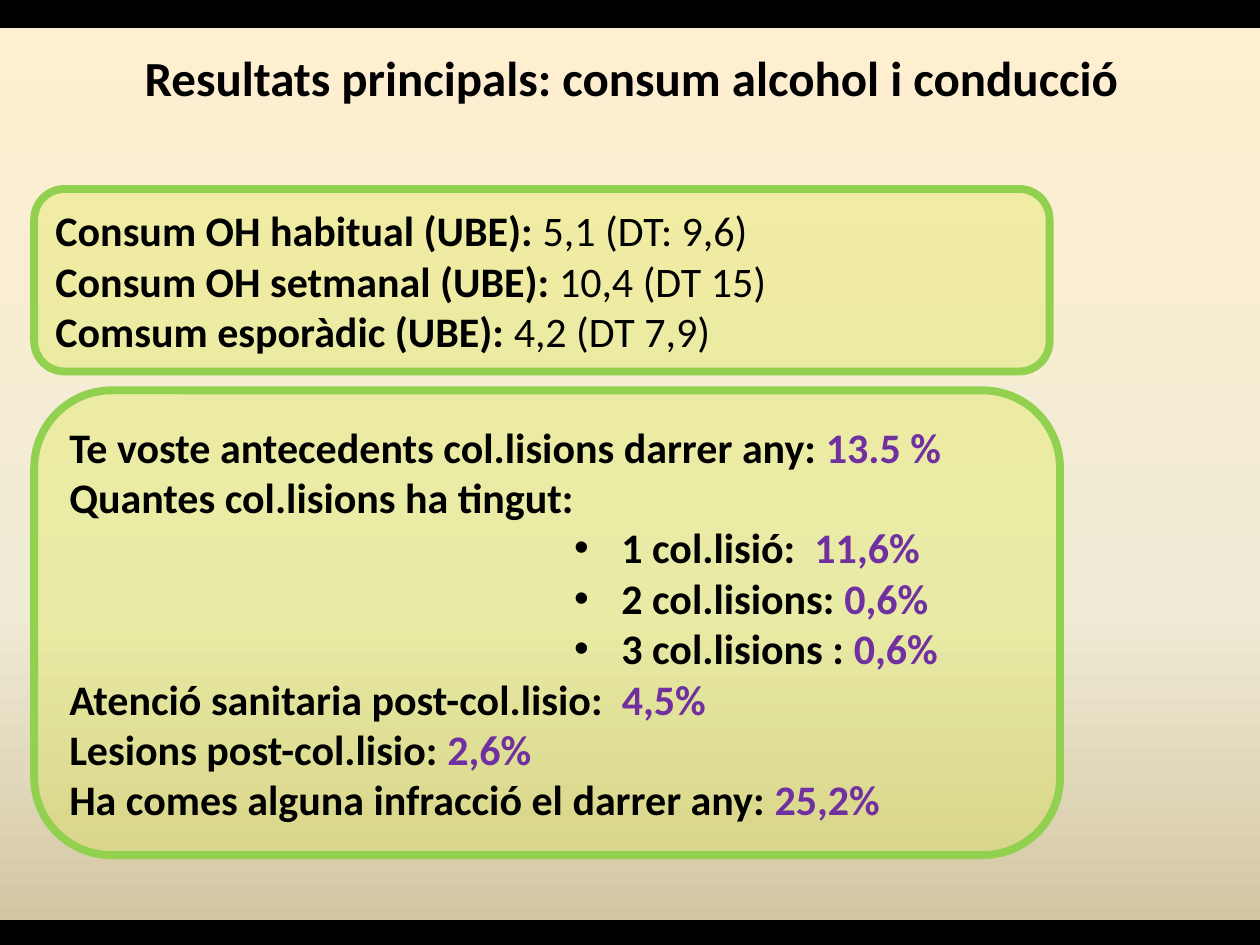
import copy
from pptx import Presentation
from pptx import util as u
from pptx.dml.color import RGBColor
from pptx.enum import shapes, text
from pptx.oxml import ns
from lxml import etree

COLORS = {
    "black": "000000", "purple": "7030A0", "green": "92D050", "lime": "D8E937",
    "sky": "FFEFD1", "sand": "F0EBD5", "earth": "D1C39F",
}


def rgb(name):
    return RGBColor.from_string(COLORS[name])


def add_text(paragraph, content, size=24, bold=True, color="black"):
    run = paragraph.add_run()
    run.text = content
    run.font.name = "Calibri"
    run.font.size = u.Pt(size)
    run.font.bold = bold
    run.font.color.rgb = rgb(color)


presentation = Presentation()
presentation.slide_width, presentation.slide_height = u.Cm(25.4), u.Cm(19.05)
slide = presentation.slides.add_slide(presentation.slide_layouts[5])

background = slide.background.fill
background.gradient()
background.gradient_angle = 270
stop_list = slide.element.find(".//" + ns.qn("a:gsLst"))
stop_list.append(copy.deepcopy(stop_list[-1]))
for stop, (position, color) in zip(
        background.gradient_stops, [(0, "sky"), (0.65, "sand"), (1, "earth")]):
    stop.position = position
    stop.color.rgb = rgb(color)

for top in (0, 18.59):
    bar = slide.shapes.add_shape(
        shapes.MSO_SHAPE.RECTANGLE, 0, u.Cm(top), presentation.slide_width, u.Cm(0.53))
    bar.shadow.inherit = False
    bar.fill.solid()
    bar.fill.fore_color.rgb = rgb("black")
    bar.line.color.rgb = rgb("black")
    bar.line.width = u.Pt(2)

consumption = [
    ("Consum OH habitual (UBE): ", "5,1 (DT: 9,6)", False),
    ("Consum OH setmanal (UBE): ", "10,4 (DT 15)", False),
    ("Comsum esporàdic (UBE): ", "4,2 (DT 7,9)", False),
]
collisions = [
    ("Te voste antecedents col.lisions darrer any: ", "13.5 %", False),
    ("Quantes col.lisions ha tingut:", "", False),
    ("1 col.lisió:  ", "11,6%", True),
    ("2 col.lisions: ", "0,6%", True),
    ("3 col.lisions : ", "0,6%", True),
    ("Atenció sanitaria post-col.lisio:  ", "4,5%", False),
    ("Lesions post-col.lisio: ", "2,6%", False),
    ("Ha comes alguna infracció el darrer any: ", "25,2%", False),
]
panels = [
    (3.81, 20.47, 3.68, consumption, {"bold": False}),
    (7.87, 20.68, 9.37, collisions, {"color": "purple"}),
]

for top, width, height, lines, value_format in panels:
    panel = slide.shapes.add_shape(
        shapes.MSO_SHAPE.ROUNDED_RECTANGLE, u.Cm(0.69), u.Cm(top), u.Cm(width), u.Cm(height))
    panel.shadow.inherit = False
    panel.fill.solid()
    panel.fill.fore_color.rgb = rgb("lime")
    fill_color = panel.element.spPr.find(ns.qn("a:solidFill"))[0]
    etree.SubElement(fill_color, ns.qn("a:alpha"), val="30000")
    panel.line.color.rgb = rgb("green")
    panel.line.width = u.Pt(4.5)

    frame = panel.text_frame
    frame.word_wrap = True
    frame.vertical_anchor = text.MSO_ANCHOR.MIDDLE
    for index, (label, value, bulleted) in enumerate(lines):
        paragraph = frame.add_paragraph() if index else frame.paragraphs[0]
        paragraph.alignment = text.PP_ALIGN.LEFT
        if bulleted:
            paragraph.level = 8
            properties = paragraph._p.get_or_add_pPr()
            properties.set("marL", str(u.Cm(11.13)))
            properties.set("indent", str(u.Cm(-0.95)))
            etree.SubElement(properties, ns.qn("a:buFont"), typeface="Arial")
            etree.SubElement(properties, ns.qn("a:buChar"), char="•")
        add_text(paragraph, label)
        if value:
            add_text(paragraph, value, **value_format)

title = slide.shapes.title
title.left, title.top, title.width, title.height = (
    u.Cm(1.32), u.Cm(0.84), u.Cm(22.81), u.Cm(2.64))
title.text_frame.word_wrap = True
title.text_frame.auto_size = text.MSO_AUTO_SIZE.NONE
title.text_frame.vertical_anchor = text.MSO_ANCHOR.TOP
title_paragraph = title.text_frame.paragraphs[0]
title_paragraph.alignment = text.PP_ALIGN.CENTER
add_text(title_paragraph, "Resultats principals: consum alcohol i conducció", size=28)

presentation.save("out.pptx")
